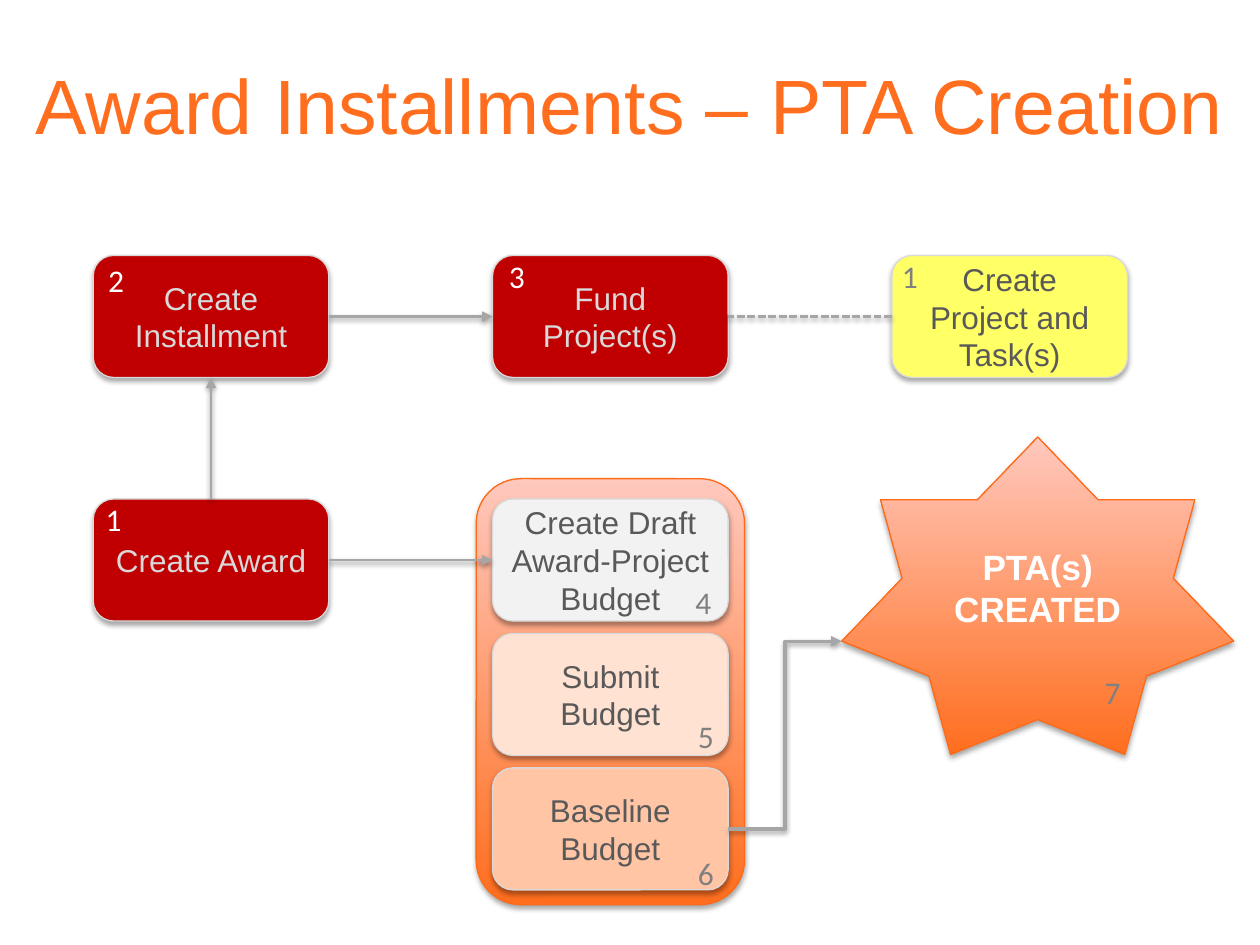
import pptx
import pptx.dml.color
import pptx.enum.dml
import pptx.enum.shapes
import pptx.enum.text
import pptx.oxml
import pptx.oxml.ns
import pptx.util
from lxml import etree

Cm, Pt = pptx.util.Cm, pptx.util.Pt
RGBColor = pptx.dml.color.RGBColor
SHAPE = pptx.enum.shapes.MSO_SHAPE
CONNECTOR = pptx.enum.shapes.MSO_CONNECTOR
ALIGN = pptx.enum.text.PP_ALIGN
ANCHOR = pptx.enum.text.MSO_ANCHOR
qn = pptx.oxml.ns.qn

ORANGE = RGBColor(0xFF, 0x6E, 0x1E)
ORANGE_EDGE = RGBColor(0xFF, 0x6A, 0x18)
PINK = RGBColor(0xFF, 0xC8, 0xBD)
RED = RGBColor(0xC0, 0x00, 0x00)
YELLOW = RGBColor(0xFF, 0xFF, 0x66)
PALE_GREY = RGBColor(0xF2, 0xF2, 0xF2)
PALE_PEACH = RGBColor(0xFF, 0xE2, 0xD2)
PEACH = RGBColor(0xFF, 0xC5, 0xA5)
LIGHT_GREY = RGBColor(0xD9, 0xD9, 0xD9)
LINE_GREY = RGBColor(0xA6, 0xA6, 0xA6)
MID_GREY = RGBColor(0x80, 0x80, 0x80)
DARK_GREY = RGBColor(0x59, 0x59, 0x59)
WHITE = RGBColor(0xFF, 0xFF, 0xFF)

TITLE = "Award Installments – PTA Creation"

# Lengths below are in centimetres.
BOX_WIDTH, BOX_HEIGHT = 4.75, 2.46
COLUMNS = [1.88 + 8.05 * i for i in range(3)]
ROWS = [5.15] + [10.06 + 2.71 * i for i in range(3)]
PANEL = (9.6, 9.65, 5.41, 8.59)
STAR = (16.97, 8.81, 7.9, 6.4)
STAR_ARM = (16.97, 12.93)

# name: (text, column, row, fill, text colour)
STEPS = {
    "installment": ("Create Installment", 0, 0, RED, LIGHT_GREY),
    "fund": ("Fund Project(s)", 1, 0, RED, LIGHT_GREY),
    "project": ("Create Project and Task(s)", 2, 0, YELLOW, DARK_GREY),
    "award": ("Create Award", 0, 1, RED, LIGHT_GREY),
    "draft": ("Create Draft Award-Project Budget", 1, 1, PALE_GREY, DARK_GREY),
    "submit": ("Submit Budget", 1, 2, PALE_PEACH, DARK_GREY),
    "baseline": ("Baseline Budget", 1, 3, PEACH, DARK_GREY),
}

# (number, left, top, colour)
NUMBERS = [
    ("1", 1.88, 9.96, WHITE),
    ("2", 1.93, 5.13, WHITE),
    ("3", 10.01, 5.05, WHITE),
    ("1", 17.93, 5.05, MID_GREY),
    ("4", 13.77, 11.63, MID_GREY),
    ("5", 13.82, 14.33, MID_GREY),
    ("6", 13.82, 17.09, MID_GREY),
    ("7", 22.02, 13.44, MID_GREY),
]

# (from, side, to, side, arrow); sides: 0 top, 1 left, 2 bottom, 3 right
LINKS = [
    ("award", 0, "installment", 2, True),
    ("installment", 3, "fund", 1, True),
    ("project", 1, "fund", 3, False),
    ("award", 3, "draft", 1, True),
]


def lengths(*values):
    return [Cm(value) for value in values]


def add_shadow(item, distance, opacity):
    """Cast a soft shadow straight down; distance in points, opacity in percent."""
    properties = item.element.spPr
    effects = properties.find(qn("a:effectLst"))
    if effects is None:
        effects = etree.SubElement(properties, qn("a:effectLst"))
    shadow = etree.SubElement(
        effects, qn("a:outerShdw"), blurRad=str(Pt(3.1)), dist=str(Pt(distance)),
        dir="5400000", rotWithShape="0")
    colour = etree.SubElement(shadow, qn("a:srgbClr"), val="000000")
    etree.SubElement(colour, qn("a:alpha"), val=str(opacity * 1000))


def write(frame, text, size, font, colour, align=ALIGN.CENTER, bold=False):
    para = frame.paragraphs[0]
    para.alignment = align
    span = para.add_run()
    span.text = text
    span.font.size = Pt(size)
    span.font.name = font
    span.font.bold = bold
    span.font.color.rgb = colour


def add_shape(page, kind, place, fill, edge):
    """Add a shadowed shape; no fill colour means the orange gradient."""
    shape = page.shapes.add_shape(kind, *lengths(*place))
    if fill is None:
        shape.fill.gradient()
        shape.fill.gradient_angle = 90
        for stop, colour in zip(shape.fill.gradient_stops, (ORANGE, PINK)):
            stop.color.rgb = colour
    else:
        shape.fill.solid()
        shape.fill.fore_color.rgb = fill
    shape.line.color.rgb = edge
    shape.line.width = Pt(0.75)
    shape.shadow.inherit = False
    add_shadow(shape, 1.8, 35)
    shape.text_frame.word_wrap = True
    shape.text_frame.vertical_anchor = ANCHOR.MIDDLE
    return shape


def style_connector(connector, width, arrow):
    connector.line.color.rgb = LINE_GREY
    connector.line.width = Pt(width)
    if arrow:
        outline = connector.element.spPr.find(qn("a:ln"))
        etree.SubElement(outline, qn("a:tailEnd"), type="triangle")
    else:
        connector.line.dash_style = pptx.enum.dml.MSO_LINE.SQUARE_DOT
    add_shadow(connector, 1.6, 38)


def main():
    deck = pptx.Presentation()
    deck.slide_width, deck.slide_height = lengths(25.4, 19.05)
    page = deck.slides.add_slide(deck.slide_layouts[6])

    title = page.shapes.add_textbox(*lengths(0, 0.86, 25.4, 3.18)).text_frame
    title.word_wrap = True
    title.margin_top = Cm(0.3)
    write(title, TITLE, 44, "Arial", ORANGE)

    add_shape(page, SHAPE.ROUNDED_RECTANGLE, PANEL, None, ORANGE_EDGE)
    boxes = {}
    for name, (text, column, row, fill, colour) in STEPS.items():
        place = (COLUMNS[column], ROWS[row], BOX_WIDTH, BOX_HEIGHT)
        box = add_shape(page, SHAPE.ROUNDED_RECTANGLE, place, fill, LIGHT_GREY)
        write(box.text_frame, text, 18, "Arial", colour)
        boxes[name] = box

    star = add_shape(page, SHAPE.STAR_7_POINT, STAR, None, ORANGE_EDGE)
    write(star.text_frame, "PTA(s) CREATED", 20, "Arial", WHITE, bold=True)

    for start, start_side, end, end_side, arrow in LINKS:
        link = page.shapes.add_connector(CONNECTOR.STRAIGHT, 0, 0, 0, 0)
        link.begin_connect(boxes[start], start_side)
        link.end_connect(boxes[end], end_side)
        style_connector(link, 1.5, arrow)

    exit_point = (COLUMNS[1] + BOX_WIDTH, ROWS[3] + BOX_HEIGHT / 2)
    elbow = page.shapes.add_connector(
        CONNECTOR.ELBOW, *lengths(*exit_point, *STAR_ARM))
    elbow.begin_connect(boxes["baseline"], 3)
    style_connector(elbow, 2, True)

    for number, left, top, colour in NUMBERS:
        label = page.shapes.add_textbox(*lengths(left, top, 0.84, 1.02)).text_frame
        label.word_wrap = False
        write(label, number, 18, "Calibri", colour, ALIGN.LEFT)

    deck.save("out.pptx")


if __name__ == "__main__":
    main()
